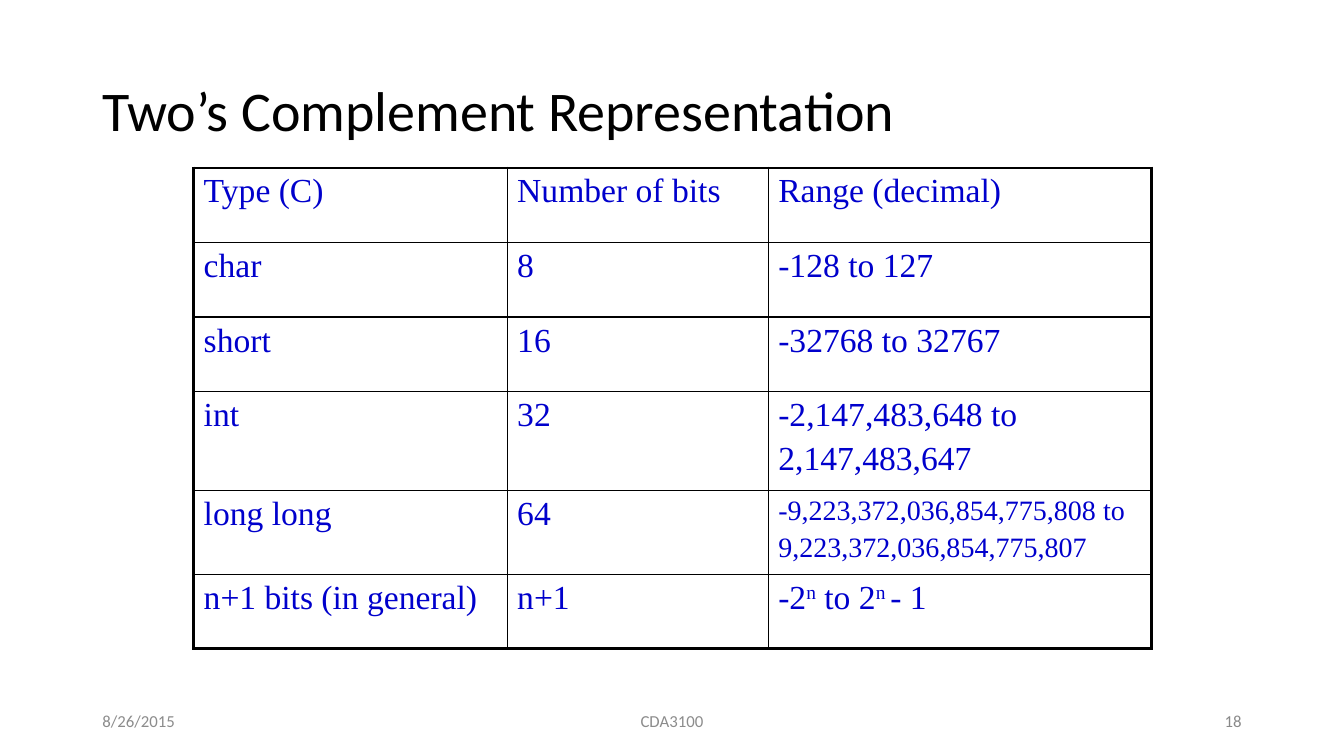
from dataclasses import dataclass

from lxml.etree import SubElement
from pptx import Presentation
from pptx.dml.color import RGBColor as RGB
from pptx.enum.text import MSO_ANCHOR as ANCHOR, MSO_AUTO_SIZE as AUTO, PP_ALIGN as ALIGN
from pptx.oxml import parse_xml
from pptx.oxml.ns import nsdecls, qn
from pptx.util import Cm, Pt


@dataclass(frozen=True)
class Theme:
    """Fonts, colours, type sizes and line widths of the slide."""
    sans: str = "Calibri"
    serif: str = "Times New Roman"
    title: str = "000000"
    cell: str = "0000CC"
    footer: str = "8C8C8C"
    number: str = "898989"
    border: str = "000000"
    title_size: int = 40
    cell_size: int = 24
    long_size: int = 20
    footer_size: int = 12
    outer: float = 2.25
    inner: float = 1


THEME = Theme()
COLUMNS = (7.9, 6.58, 9.65)
ROWS = (
    (1.88, "Type (C)", "Number of bits", "Range (decimal)"),
    (1.88, "char", "8", "-128 to 127"),
    (1.88, "short", "16", "-32768 to 32767"),
    (2.49, "int", "32", "-2,147,483,648 to\n2,147,483,647"),
    (2.11, "long long", "64",
     "-9,223,372,036,854,775,808 to\n9,223,372,036,854,775,807"),
    (1.88, "n+1 bits (in general)", "n+1", "-2^n^ to 2^n ^- 1"),
)
FOOTERS = (
    (2.33, 7.62, "8/26/2015", ALIGN.LEFT, THEME.footer),
    (11.22, 11.43, "CDA3100", ALIGN.CENTER, THEME.footer),
    (23.92, 7.62, "18", ALIGN.RIGHT, THEME.number),
)


def write(tf, text, font=THEME.sans, size=THEME.footer_size, color=THEME.title,
          align=ALIGN.LEFT, line=None, before=None):
    """Write one paragraph per line of text, raising what stands between carets."""
    for i, words in enumerate(text.split("\n")):
        p = tf.paragraphs[0] if i == 0 else tf.add_paragraph()
        p.alignment, p.line_spacing = align, line
        if before is not None:
            spacing = SubElement(p._p.get_or_add_pPr(), qn("a:spcBef"))
            SubElement(spacing, qn("a:spcPct")).set("val", str(before * 1000))
        for j, part in enumerate(words.split("^")):
            r = p.add_run()
            r.text = part
            r.font.name, r.font.size = font, Pt(size)
            r.font.color.rgb = RGB.from_string(color)
            if j % 2:
                r._r.get_or_add_rPr().set("baseline", "30000")


def add_title(s, text):
    """Place and fill the title placeholder."""
    sp = s.shapes.title
    sp.left, sp.top, sp.width, sp.height = Cm(2.33), Cm(1.01), Cm(29.21), Cm(3.68)
    tf = sp.text_frame
    tf.auto_size, tf.vertical_anchor = AUTO.NONE, ANCHOR.MIDDLE
    write(tf, text, size=THEME.title_size, line=0.9)


def add_footer(s, left, width, text, align, color):
    """Add one text box of the footer line."""
    tf = s.shapes.add_textbox(Cm(left), Cm(17.65), Cm(width), Cm(1.01)).text_frame
    tf.word_wrap, tf.vertical_anchor = True, ANCHOR.MIDDLE
    write(tf, text, align=align, color=color)


def set_borders(cell, outer_sides):
    """Draw the four cell borders, heavier on the outer sides."""
    tcPr = cell._tc.get_or_add_tcPr()
    for i, side in enumerate("LRTB"):
        width = Pt(THEME.outer if side in outer_sides else THEME.inner)
        tcPr.insert(i, parse_xml(
            f'<a:ln{side} {nsdecls("a")} w="{width}"><a:solidFill>'
            f'<a:srgbClr val="{THEME.border}"/></a:solidFill></a:ln{side}>'))


def add_type_table(s):
    """Add the table of integer types and their ranges."""
    table = s.shapes.add_table(len(ROWS), len(COLUMNS), Cm(4.88), Cm(4.23),
                               Cm(sum(COLUMNS)), Cm(sum(row[0] for row in ROWS))).table
    table.first_row = table.horz_banding = False
    for column, width in zip(table.columns, COLUMNS):
        column.width = Cm(width)
    last_row, last_col = len(ROWS) - 1, len(COLUMNS) - 1
    for i, (height, *texts) in enumerate(ROWS):
        table.rows[i].height = Cm(height)
        for j, text in enumerate(texts):
            cell = table.cell(i, j)
            cell.fill.background()
            edges = {"L": j == 0, "R": j == last_col, "T": i == 0, "B": i == last_row}
            set_borders(cell, [side for side, outer in edges.items() if outer])
            size = THEME.long_size if len(text) > 40 else THEME.cell_size
            write(cell.text_frame, text, font=THEME.serif, size=size,
                  color=THEME.cell, before=20)


def main():
    """Build the slide and save it."""
    prs = Presentation()
    prs.slide_width, prs.slide_height = Cm(33.87), Cm(19.05)
    s = prs.slides.add_slide(prs.slide_layouts[5])
    for footer in FOOTERS:
        add_footer(s, *footer)
    add_title(s, "Two’s Complement Representation")
    add_type_table(s)
    prs.save("out.pptx")


if __name__ == "__main__":
    main()
